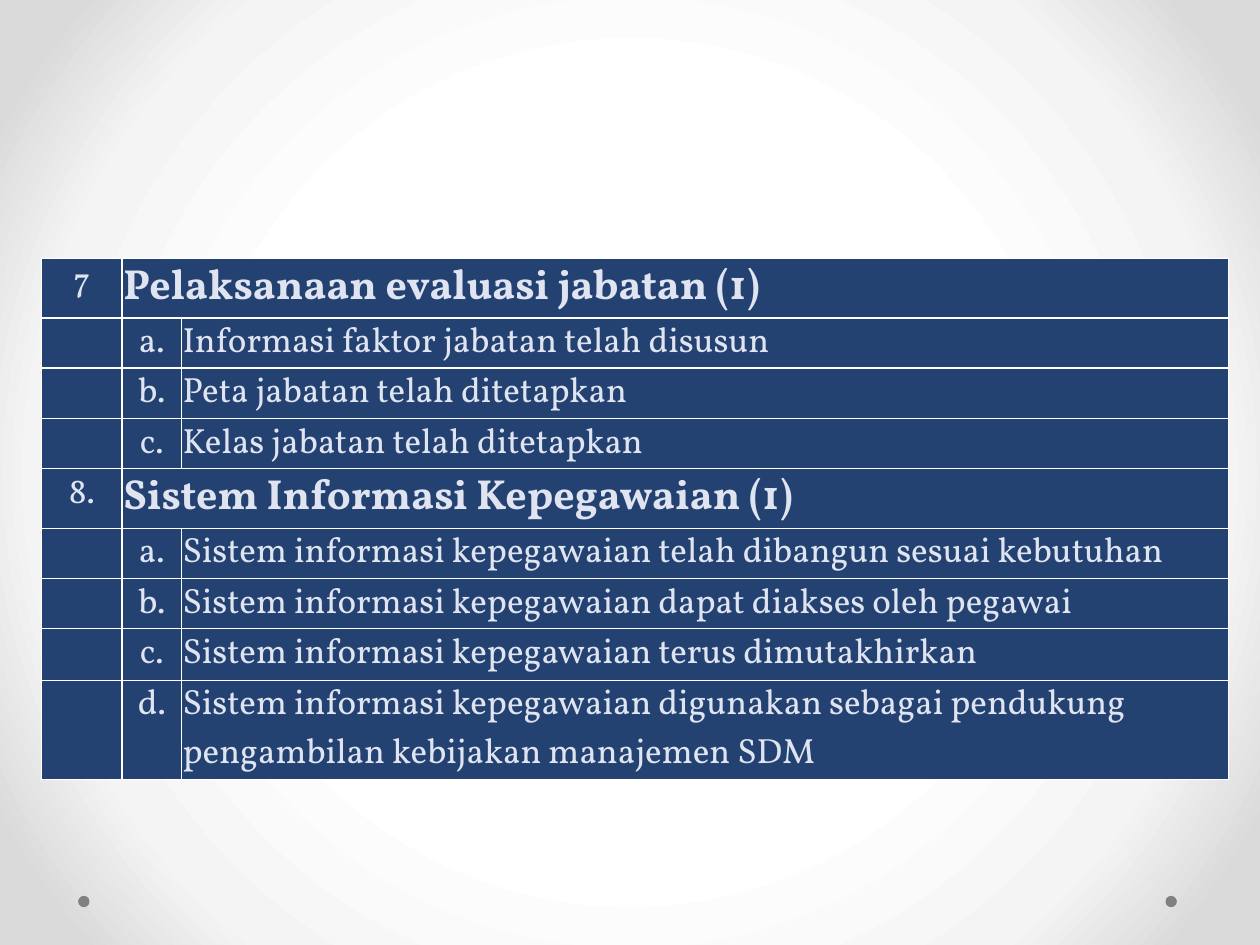
from typing import NamedTuple

from pptx import Presentation
from pptx.dml.color import RGBColor
from pptx.enum.shapes import MSO_SHAPE
from pptx.enum.text import PP_ALIGN
from pptx.oxml import parse_xml
from pptx.oxml.ns import nsdecls, qn
from pptx.util import Inches, Pt

NAVY = RGBColor(0x23, 0x42, 0x71)
PALE = RGBColor(0xDF, 0xE4, 0xF0)
GRAY = RGBColor(0x80, 0x80, 0x80)
WHITE = RGBColor(0xFF, 0xFF, 0xFF)
SILVER = RGBColor(0xF4, 0xF4, 0xF4)
ASH = RGBColor(0xDA, 0xDA, 0xDA)
FONT = "Vollkorn"
STOPS = ((50, WHITE), (76, SILVER), (92, ASH))
WIDTHS = (0.64, 0.47, 8.31)


class Row(NamedTuple):
    height: float
    number: str
    letter: str
    text: str


ROWS = (
    Row(0.36, "7", "", "Pelaksanaan evaluasi jabatan (1)"),
    Row(0.3, "", "a.", "Informasi faktor jabatan telah disusun"),
    Row(0.35, "", "b.", "Peta jabatan telah ditetapkan"),
    Row(0.36, "", "c.", "Kelas jabatan telah ditetapkan"),
    Row(0.36, "8.", "", "Sistem Informasi Kepegawaian (1)"),
    Row(0.3, "", "a.", "Sistem informasi kepegawaian telah dibangun sesuai kebutuhan"),
    Row(0.3, "", "b.", "Sistem informasi kepegawaian dapat diakses oleh pegawai"),
    Row(0.41, "", "c.", "Sistem informasi kepegawaian terus dimutakhirkan"),
    Row(0.59, "", "d.", "Sistem informasi kepegawaian digunakan sebagai pendukung "
        "pengambilan kebijakan manajemen SDM"),
)


def paint_back(slide) -> None:
    slide.background.fill.solid()
    back = slide._element.find(".//" + qn("p:bgPr"))
    stops = "".join(
        f'<a:gs pos="{place * 1000}"><a:srgbClr val="{color}"/></a:gs>'
        for place, color in STOPS
    )
    back.replace(back[0], parse_xml(
        f'<a:gradFill {nsdecls("a")} rotWithShape="1"><a:gsLst>{stops}</a:gsLst>'
        '<a:path path="circle"><a:fillToRect l="50000" t="50000" r="50000" b="50000"/>'
        '</a:path></a:gradFill>'
    ))


def add_dot(slide, left: float) -> None:
    dot = slide.shapes.add_shape(
        MSO_SHAPE.OVAL, Inches(left), Inches(7.11), Inches(0.09), Inches(0.09))
    dot.shadow.inherit = False
    dot.fill.solid()
    dot.fill.fore_color.rgb = GRAY
    dot.line.fill.background()


def style_cell(cell) -> None:
    cell.margin_left = cell.margin_right = cell.margin_top = Inches(0.01)
    cell.margin_bottom = 0
    cell.fill.solid()
    cell.fill.fore_color.rgb = NAVY
    props = cell._tc.get_or_add_tcPr()
    for index, side in enumerate("LRTB"):
        props.insert(index, parse_xml(
            f'<a:ln{side} {nsdecls("a")} w="{Pt(1)}"><a:solidFill>'
            f'<a:srgbClr val="{WHITE}"/></a:solidFill></a:ln{side}>'
        ))


def write_cell(cell, text: str, align: PP_ALIGN, size: int = 20, bold: bool = False) -> None:
    cell.text = text
    para = cell.text_frame.paragraphs[0]
    para.alignment = align
    para.font.name = FONT
    para.font.size = Pt(size)
    para.font.bold = bold
    para.font.color.rgb = PALE


def add_grid(slide) -> None:
    frame = slide.shapes.add_table(
        len(ROWS), len(WIDTHS), Inches(0.33), Inches(2.05), Inches(9.42), Inches(3.62))
    table = frame.table
    table.first_row = table.horz_banding = False
    for column, width in zip(table.columns, WIDTHS):
        column.width = Inches(width)
    for index, row in enumerate(ROWS):
        table.rows[index].height = Inches(row.height)
        cells = [table.cell(index, column) for column in range(len(WIDTHS))]
        for cell in cells:
            style_cell(cell)
        number, letter, text = cells
        if row.number:
            letter.merge(text)
            write_cell(number, row.number, PP_ALIGN.CENTER)
            write_cell(letter, row.text, PP_ALIGN.LEFT, 24, True)
        else:
            write_cell(letter, row.letter, PP_ALIGN.CENTER)
            write_cell(text, row.text, PP_ALIGN.LEFT)
    frame.height = Inches(3.62)


def main() -> None:
    deck = Presentation()
    deck.slide_width, deck.slide_height = Inches(10), Inches(7.5)
    slide = deck.slides.add_slide(deck.slide_layouts[6])
    paint_back(slide)
    for left in (9.25, 0.62):
        add_dot(slide, left)
    add_grid(slide)
    deck.save("out.pptx")


if __name__ == "__main__":
    main()
